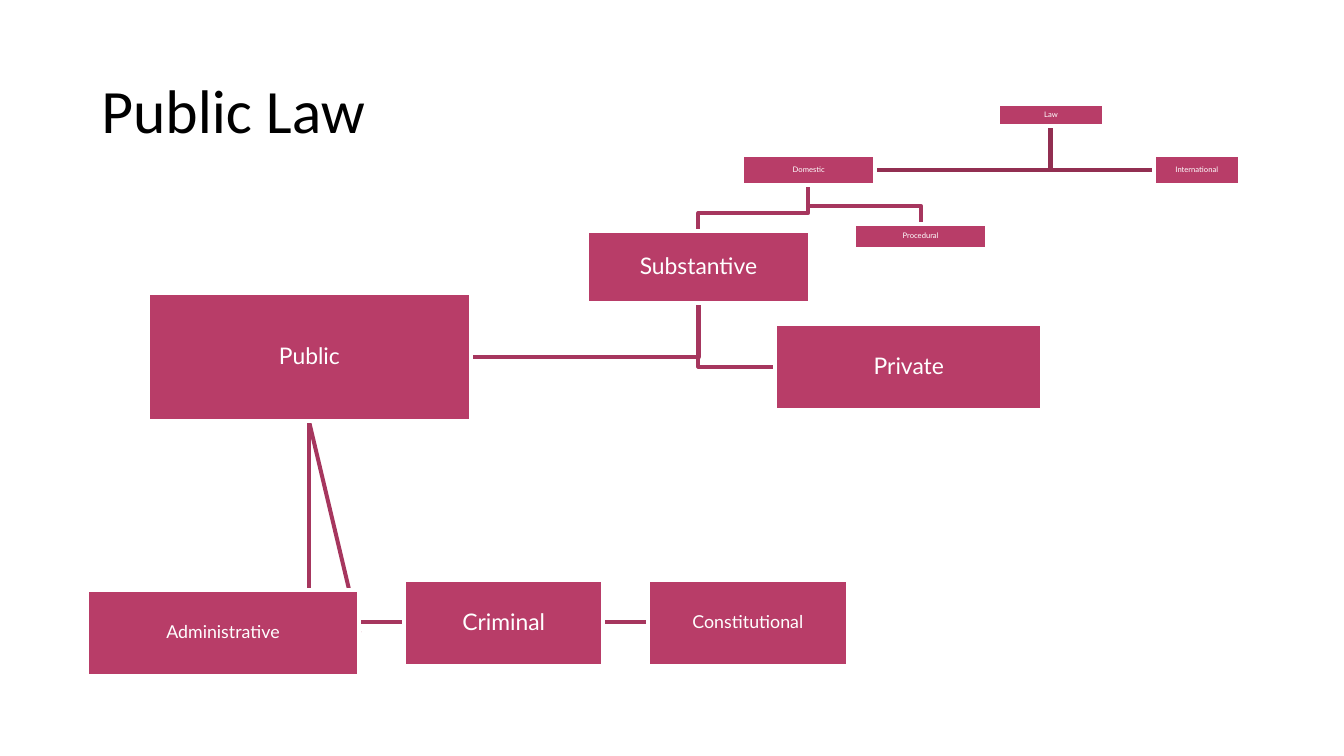
"""Build the Public Law slide: a hierarchy of boxes joined by lines."""
from pptx import Presentation
from pptx.dml.color import RGBColor
from pptx.enum.shapes import MSO_CONNECTOR, MSO_SHAPE
from pptx.enum.text import MSO_ANCHOR, PP_ALIGN
from pptx.util import Pt
from lxml.etree import SubElement
from pptx.oxml.ns import qn
from dataclasses import dataclass


@dataclass(frozen=True)
class Theme:
    box: RGBColor = RGBColor.from_string("B83D68")
    upper_link: RGBColor = RGBColor.from_string("922F51")
    lower_link: RGBColor = RGBColor.from_string("A6365E")
    white: RGBColor = RGBColor.from_string("FFFFFF")
    black: RGBColor = RGBColor.from_string("000000")
    title_font: str = "Calibri"
    box_font: str = "Lato"
    title: float = 48.5
    large: int = 18
    medium: int = 14
    small: int = 6
    line: float = 3.15


theme = Theme()
PX = 9144
BEND = 20


def write_text(shape, text, *, size, font, color, align=PP_ALIGN.LEFT, inset=None, space_after=0):
    frame = shape.text_frame
    frame.word_wrap = True
    frame.vertical_anchor = MSO_ANCHOR.MIDDLE
    if inset is not None:
        frame.margin_left = frame.margin_right = inset * PX
        frame.margin_top = frame.margin_bottom = inset * PX
    paragraph = frame.paragraphs[0]
    paragraph.alignment = align
    paragraph.line_spacing = 0.9
    paragraph.space_after = Pt(space_after)
    run = paragraph.add_run()
    run.text = text
    run.font.size = Pt(size)
    run.font.name = font
    run.font.color.rgb = color


presentation = Presentation()
presentation.slide_width = 1470 * PX
presentation.slide_height = 827 * PX
slide = presentation.slides.add_slide(presentation.slide_layouts[6])

title = slide.shapes.add_textbox(101 * PX, 44 * PX, 1268 * PX, 160 * PX)
write_text(title, "Public Law", size=theme.title, font=theme.title_font, color=theme.black)

boxes = {
    "Law": (1092, 114, 115, 24, theme.small),
    "Domestic": (812, 170, 145, 33, theme.small),
    "Procedural": (934, 245, 146, 27, theme.small),
    "Substantive": (642, 253, 244, 79, theme.large),
    "Public": (162, 321, 353, 140, theme.large),
    "Constitutional": (709, 634, 218, 95, theme.medium),
    "Criminal": (442, 634, 218, 95, theme.large),
    "Administrative": (95, 645, 298, 95, theme.medium),
    "Private": (848, 354, 292, 95, theme.large),
    "International": (1262, 170, 94, 33, theme.small),
}

links = [
    ("Law", "International", "side"),
    ("Substantive", "Private", "side"),
    ("Public", "Administrative", "straight"),
    ("Public", "Criminal", "side"),
    ("Public", "Constitutional", "side"),
    ("Substantive", "Public", "side"),
    ("Domestic", "Substantive", "top"),
    ("Domestic", "Procedural", "top"),
    ("Law", "Domestic", "side"),
]

for parent, child, route in links:
    left, top, width, height, _ = boxes[parent]
    start_x, start_y = left + width // 2, top + height
    left, top, width, height, _ = boxes[child]
    middle_x, middle_y = left + width // 2, top + height // 2
    edge_x = left if left > start_x else left + width
    if route == "straight":
        link = slide.shapes.add_connector(
            MSO_CONNECTOR.STRAIGHT, start_x * PX, start_y * PX, edge_x * PX, middle_y * PX)
        SubElement(link._element.spPr, qn("a:effectLst"))
    else:
        if route == "side":
            points = [(start_x, middle_y), (edge_x, middle_y)]
        else:
            points = [(start_x, top - BEND), (middle_x, top - BEND), (middle_x, top)]
        builder = slide.shapes.build_freeform(start_x, start_y, scale=PX)
        builder.add_line_segments(points, close=False)
        link = builder.convert_to_shape()
        link.fill.background()
        link.shadow.inherit = False
    link.line.color.rgb = theme.upper_link if parent == "Law" else theme.lower_link
    link.line.width = Pt(theme.line)

space_after = {theme.small: 3, theme.medium: 6, theme.large: 8}
for name, (left, top, width, height, size) in boxes.items():
    box = slide.shapes.add_shape(
        MSO_SHAPE.RECTANGLE, left * PX, top * PX, width * PX, height * PX)
    box.shadow.inherit = False
    box.fill.solid()
    box.fill.fore_color.rgb = theme.box
    box.line.color.rgb = theme.white
    box.line.width = Pt(theme.line)
    write_text(box, name, size=size, font=theme.box_font, color=theme.white,
               align=PP_ALIGN.CENTER, inset=0 if size == theme.small else 1,
               space_after=space_after[size])

presentation.save("out.pptx")
